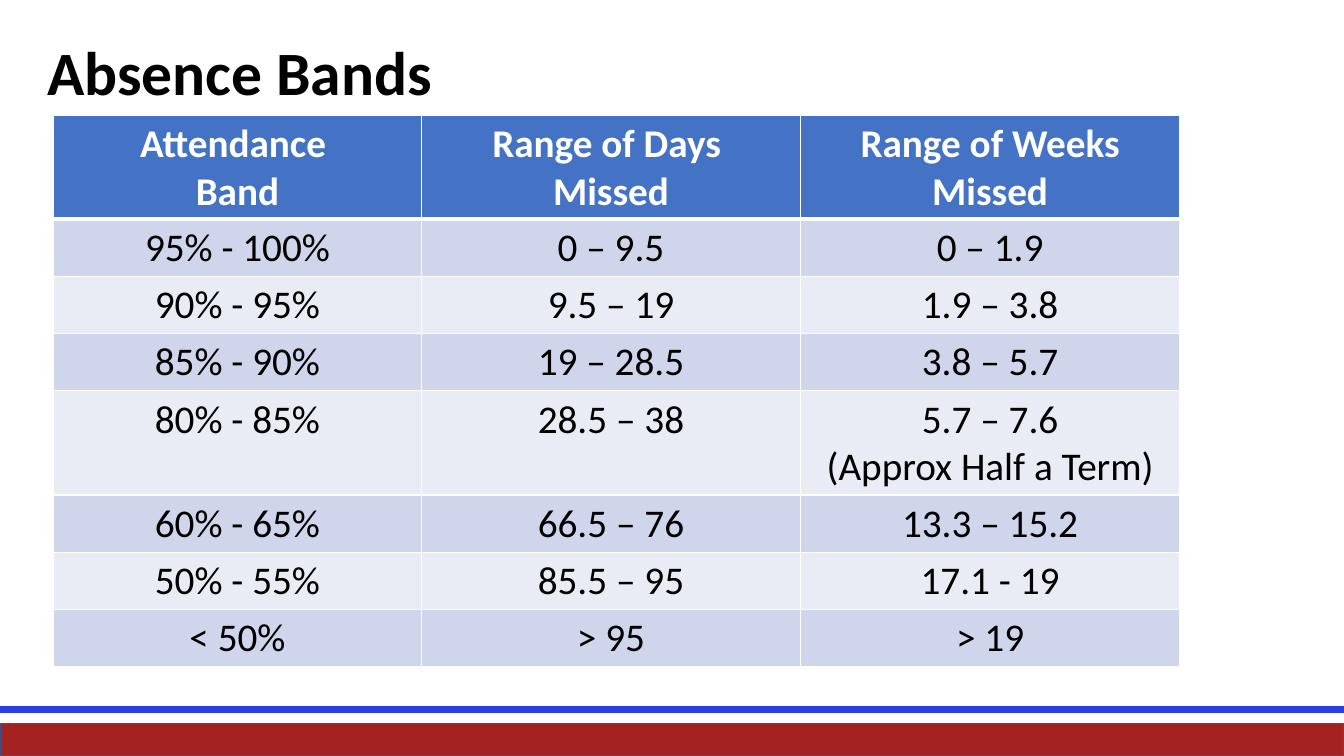
from lxml import etree
from pptx import Presentation
from pptx.dml.color import RGBColor
from pptx.enum.shapes import MSO_CONNECTOR, MSO_SHAPE
from pptx.enum.text import MSO_ANCHOR, PP_ALIGN
from pptx.oxml.ns import qn
from pptx.util import Inches, Pt

STRAIGHT = MSO_CONNECTOR.STRAIGHT
RECTANGLE = MSO_SHAPE.RECTANGLE
MIDDLE = MSO_ANCHOR.MIDDLE
CENTER = PP_ALIGN.CENTER

FONT = "Calibri"
SLIDE_WIDTH, SLIDE_HEIGHT = 13.33, 7.5
COLORS = {
    "black": "000000",
    "white": "FFFFFF",
    "header": "4472C4",
    "odd_row": "CFD5EA",
    "even_row": "E9EBF5",
    "footer": "A42320",
    "footer_edge": "325491",
    "rule": "293FE2",
}
COLUMN_WIDTHS = [3.65, 3.76, 3.76]
ROW_HEIGHT = 0.49
TALL_ROW_HEIGHTS = {0: 0.89, 4: 1.0}
ROWS = [
    ["Attendance \nBand", "Range of Days \nMissed", "Range of Weeks Missed"],
    ["95% - 100%", "0 – 9.5", "0 – 1.9"],
    ["90% - 95%", "9.5 – 19", "1.9 – 3.8"],
    ["85% - 90%", "19 – 28.5", "3.8 – 5.7"],
    ["80% - 85%", "28.5 – 38", "5.7 – 7.6\n(Approx Half a Term)"],
    ["60% - 65%", "66.5 – 76", "13.3 – 15.2"],
    ["50% - 55%", "85.5 – 95", "17.1 - 19"],
    ["< 50%", "> 95", "> 19"],
]


def rgb(name):
    return RGBColor.from_string(COLORS[name])


def format_paragraph(paragraph, size, color, bold):
    for run in paragraph.runs:
        run.font.name = FONT
        run.font.size = Pt(size)
        run.font.bold = bold
        run.font.color.rgb = rgb(color)


def add_footer(slide):
    band = slide.shapes.add_shape(
        RECTANGLE, 0, Inches(7.18), Inches(SLIDE_WIDTH), Inches(0.32))
    band.shadow.inherit = False
    band.fill.solid()
    band.fill.fore_color.rgb = rgb("footer")
    band.line.color.rgb = rgb("footer_edge")
    band.line.width = Pt(1)

    rule = slide.shapes.add_connector(
        STRAIGHT, 0, Inches(7.04), Inches(SLIDE_WIDTH), Inches(7.04))
    rule.line.color.rgb = rgb("rule")
    rule.line.width = Pt(5.25)
    etree.SubElement(rule._element.spPr, qn("a:effectLst"))


def add_title(slide, text):
    box = slide.shapes.add_textbox(
        Inches(0.37), Inches(0.35), Inches(11.5), Inches(0.79))
    frame = box.text_frame
    frame.word_wrap = True
    frame.vertical_anchor = MIDDLE
    frame.text = text
    paragraph = frame.paragraphs[0]
    paragraph.line_spacing = 0.9
    format_paragraph(paragraph, 44, "black", True)


def set_borders(cell, bottom_width):
    """Draw white borders, which must precede the fill in the cell properties."""
    properties = cell._tc.get_or_add_tcPr()
    widths = {"a:lnL": 1, "a:lnR": 1, "a:lnT": 1, "a:lnB": bottom_width}
    for tag, width in widths.items():
        line = etree.SubElement(properties, qn(tag), w=str(Pt(width)))
        fill = etree.SubElement(line, qn("a:solidFill"))
        etree.SubElement(fill, qn("a:srgbClr"), val=COLORS["white"])


def fill_cell(cell, text, row_index):
    is_header = row_index == 0
    set_borders(cell, 3 if is_header else 1)
    cell.fill.solid()
    stripe = "odd_row" if row_index % 2 else "even_row"
    cell.fill.fore_color.rgb = rgb("header" if is_header else stripe)
    cell.text_frame.text = text
    for paragraph in cell.text_frame.paragraphs:
        paragraph.alignment = CENTER
        format_paragraph(paragraph, 28, "white" if is_header else "black", is_header)


def add_band_table(slide):
    heights = [TALL_ROW_HEIGHTS.get(index, ROW_HEIGHT) for index in range(len(ROWS))]
    table = slide.shapes.add_table(
        len(ROWS), len(COLUMN_WIDTHS), Inches(0.53), Inches(1.14),
        Inches(sum(COLUMN_WIDTHS)), Inches(sum(heights))).table
    for column, width in zip(table.columns, COLUMN_WIDTHS):
        column.width = Inches(width)
    for row_index, (row, texts) in enumerate(zip(table.rows, ROWS)):
        row.height = Inches(heights[row_index])
        for cell, text in zip(row.cells, texts):
            fill_cell(cell, text, row_index)


def main():
    presentation = Presentation()
    presentation.slide_width = Inches(SLIDE_WIDTH)
    presentation.slide_height = Inches(SLIDE_HEIGHT)
    slide = presentation.slides.add_slide(presentation.slide_layouts[6])
    add_footer(slide)
    add_title(slide, "Absence Bands")
    add_band_table(slide)
    presentation.save("out.pptx")


if __name__ == "__main__":
    main()
